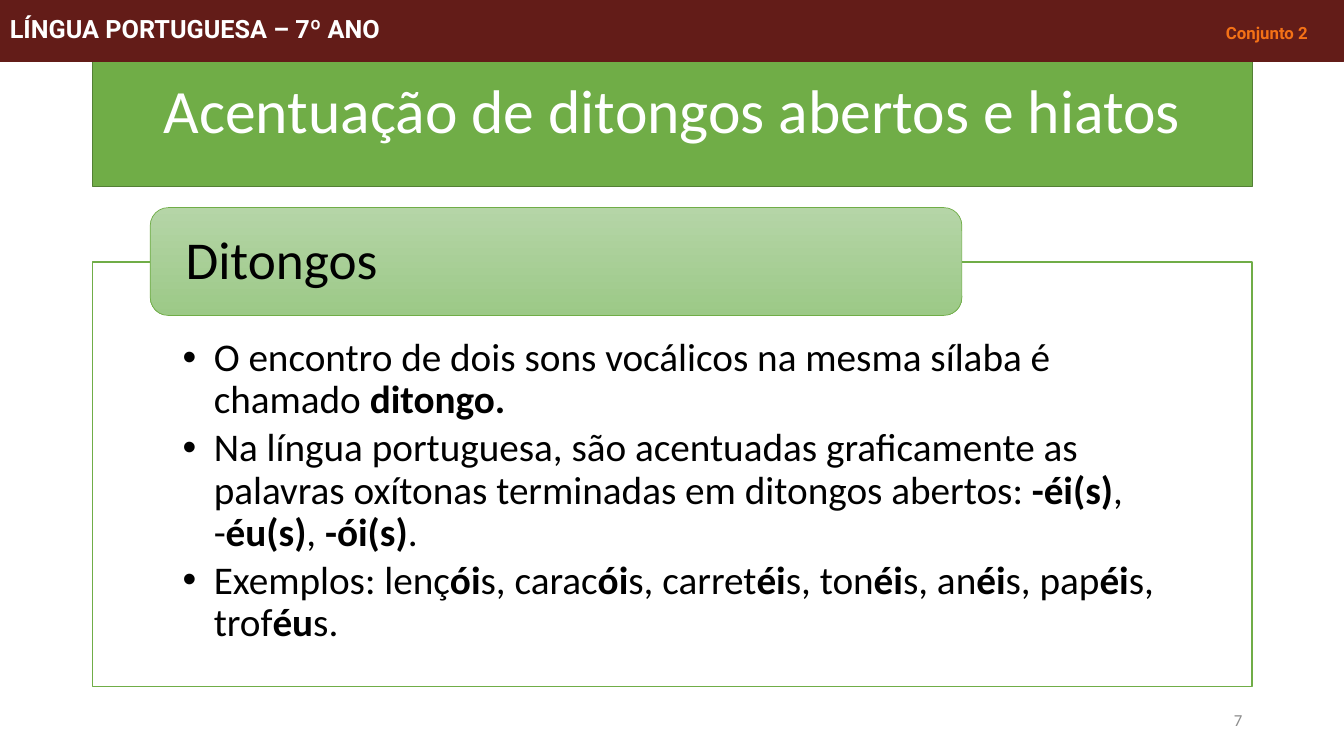
"""Builds the slide on accents in open diphthongs and hiatuses."""
from dataclasses import dataclass

from lxml import etree
from pptx import Presentation
from pptx.dml.color import RGBColor
from pptx.enum.shapes import MSO_SHAPE
from pptx.enum.text import MSO_ANCHOR, MSO_AUTO_SIZE, PP_ALIGN
from pptx.oxml.ns import qn
from pptx.util import Inches, Pt

RECT, ROUNDED = MSO_SHAPE.RECTANGLE, MSO_SHAPE.ROUNDED_RECTANGLE
TOP, MIDDLE = MSO_ANCHOR.TOP, MSO_ANCHOR.MIDDLE
LEFT, CENTER, RIGHT = PP_ALIGN.LEFT, PP_ALIGN.CENTER, PP_ALIGN.RIGHT
NO_AUTOFIT = MSO_AUTO_SIZE.NONE

COLORS = {
    "green": "70AD47", "dark_green": "538035", "light_top": "B5D5A7",
    "light_bottom": "9CC987", "maroon": "631C18", "orange": "F47116",
    "white": "FFFFFF", "black": "000000", "gray": "8C8C8C",
}
BULLETS = [
    "O encontro de dois sons vocálicos na mesma sílaba é chamado *ditongo.*",
    "Na língua portuguesa, são acentuadas graficamente as palavras oxítonas "
    "terminadas em ditongos abertos: *-éi(s)*, |-*éu(s)*, *-ói(s)*.",
    "Exemplos: lenç*ói*s, carac*ói*s, carret*éi*s, ton*éi*s, an*éi*s, "
    "pap*éi*s, trof*éu*s.",
]


@dataclass
class Box:
    left: float
    top: float
    width: float
    height: float

    def lengths(self) -> list:
        """Returns the box as slide lengths."""
        return [Inches(v) for v in (self.left, self.top, self.width, self.height)]


@dataclass
class Panel:
    box: Box
    kind: int
    fill: str
    line: str
    weight: float


@dataclass
class Label:
    text: str
    box: Box
    size: float
    color: str
    font: str = "Calibri"
    bold: bool = False
    align: int = LEFT
    inset: float = 0.1


FRAME = Box(0.92, 2.6, 11.5, 4.21)
TITLE = Label("Acentuação de ditongos abertos e hiatos",
              Box(0.92, 0.4, 11.5, 1.45), 44, "white", align=CENTER)
TITLE_PANEL = Panel(TITLE.box, RECT, "green", "dark_green", 1)
FRAME_PANEL = Panel(FRAME, RECT, "white", "green", 1)
TAB_PANEL = Panel(Box(1.49, 2.06, 8.05, 1.07), ROUNDED, "green", "green", 0.5)
HEADER_PANEL = Panel(Box(0, 0, 13.33, 0.61), RECT, "maroon", "maroon", 0.75)
HEADER = Label("LÍNGUA PORTUGUESA – 7º ANO", HEADER_PANEL.box, 18, "white",
               "Roboto", True)
LABELS = [
    Label("Ditongos", Box(1.54, 2.12, 7.95, 0.96), 38, "black", inset=0.3),
    Label("7", Box(9.42, 6.95, 3, 0.4), 12, "gray", align=RIGHT),
]
SET_LABEL = Label("Conjunto 2", Box(11.07, 0.03, 2, 0.61), 12, "orange",
                  "Roboto", True, RIGHT)


def rgb(name: str) -> RGBColor:
    """Looks up a named colour."""
    return RGBColor.from_string(COLORS[name])


def place(sp, box: Box) -> None:
    """Moves and sizes a shape."""
    sp.left, sp.top, sp.width, sp.height = box.lengths()


def paint(sp, panel: Panel) -> None:
    """Applies fill and outline."""
    sp.fill.solid()
    sp.fill.fore_color.rgb = rgb(panel.fill)
    sp.line.color.rgb = rgb(panel.line)
    sp.line.width = Pt(panel.weight)


def add_panel(s, panel: Panel):
    """Adds a painted shape without shadow."""
    sp = s.shapes.add_shape(panel.kind, *panel.box.lengths())
    sp.shadow.inherit = False
    paint(sp, panel)
    return sp


def style(r, size: float, color: str, font: str, bold: bool) -> None:
    """Formats one run."""
    r.font.size, r.font.name, r.font.bold = Pt(size), font, bold
    r.font.color.rgb = rgb(color)


def write(sp, label: Label) -> None:
    """Writes a one-paragraph label into a shape."""
    tf = sp.text_frame
    tf.text = label.text
    tf.word_wrap, tf.auto_size, tf.vertical_anchor = True, NO_AUTOFIT, MIDDLE
    tf.margin_left = tf.margin_right = Inches(label.inset)
    p = tf.paragraphs[0]
    p.alignment, p.line_spacing = label.align, 0.9
    style(p.runs[0], label.size, label.color, label.font, label.bold)


def write_bullet(p, text: str) -> None:
    """Writes a bullet; asterisks enclose bold and a bar breaks the line."""
    p.level, p.alignment, p.line_spacing = 1, LEFT, 0.9
    p.space_before, p.space_after = Pt(0), Pt(4)
    pPr = p._p.get_or_add_pPr()
    pPr.set("marL", str(Inches(0.31)))
    pPr.set("indent", str(-Inches(0.31)))
    etree.SubElement(pPr, qn("a:buFont"), typeface="Arial")
    etree.SubElement(pPr, qn("a:buChar"), char="•")
    for i, segment in enumerate(text.split("*")):
        for j, piece in enumerate(segment.split("|")):
            if j:
                p.add_line_break()
            if piece:
                r = p.add_run()
                r.text = piece
                style(r, 28, "black", "Calibri", i % 2 == 1)


def write_body(sp) -> None:
    """Fills the body placeholder with the bullets."""
    place(sp, FRAME)
    tf = sp.text_frame
    tf.word_wrap, tf.auto_size, tf.vertical_anchor = True, NO_AUTOFIT, TOP
    tf.margin_left = tf.margin_right = Inches(0.89)
    tf.margin_top, tf.margin_bottom = Inches(0.75), Inches(0.22)
    for i, text in enumerate(BULLETS):
        write_bullet(tf.add_paragraph() if i else tf.paragraphs[0], text)


def add_label(s, label: Label) -> None:
    """Adds a text box with a label."""
    write(s.shapes.add_textbox(*label.box.lengths()), label)


def main() -> None:
    """Builds and saves the slide."""
    prs = Presentation()
    prs.slide_width, prs.slide_height = Inches(13.33), Inches(7.5)
    s = prs.slides.add_slide(prs.slide_layouts[1])
    title, body = s.shapes.title, s.placeholders[1]
    place(title, TITLE.box)
    paint(title, TITLE_PANEL)
    write(title, TITLE)
    frame = add_panel(s, FRAME_PANEL)
    title.element.addnext(frame.element)
    write_body(body)
    tab = add_panel(s, TAB_PANEL)
    tab.fill.gradient()
    tab.fill.gradient_angle = 270
    for stop, name in zip(tab.fill.gradient_stops, ("light_top", "light_bottom")):
        stop.color.rgb = rgb(name)
    for label in LABELS:
        add_label(s, label)
    write(add_panel(s, HEADER_PANEL), HEADER)
    add_label(s, SET_LABEL)
    prs.save("out.pptx")


if __name__ == "__main__":
    main()
